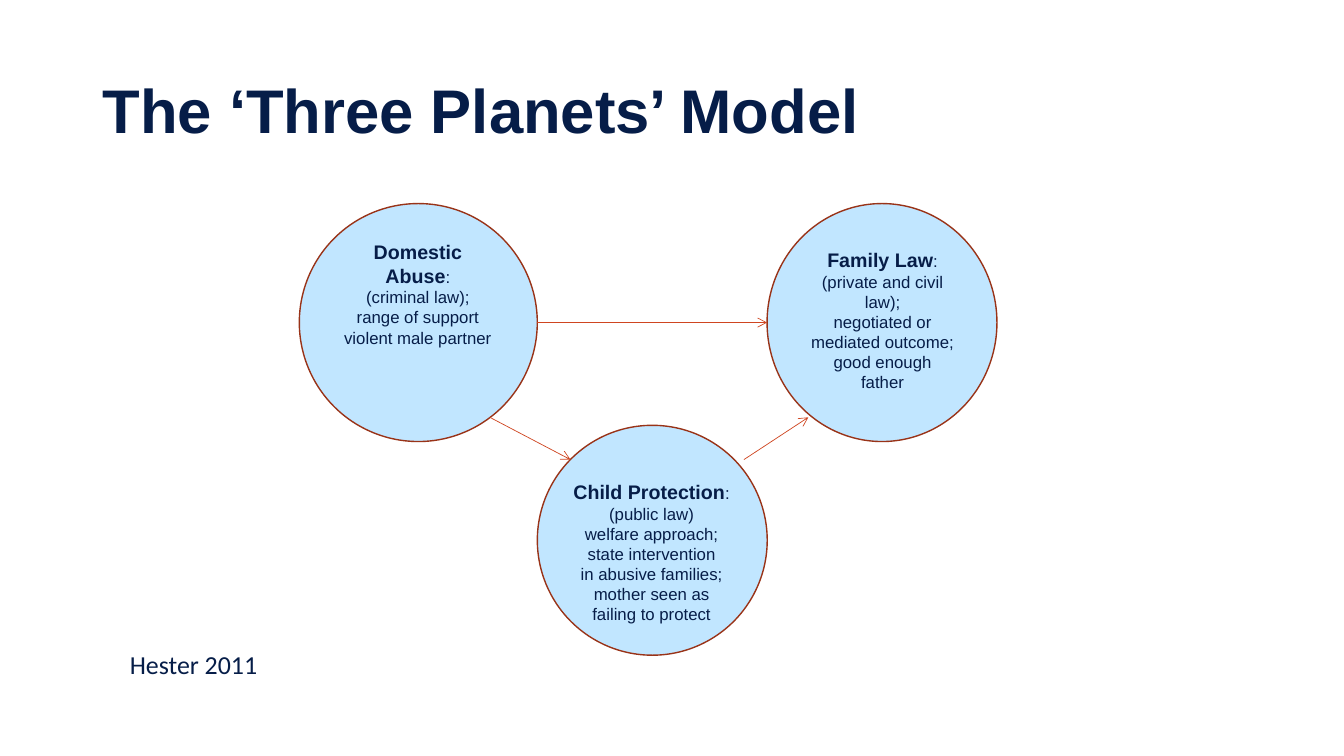
"""Build the 'Three Planets' model slide."""
from dataclasses import dataclass

from lxml.etree import SubElement
from pptx import Presentation
from pptx.dml.color import RGBColor
from pptx.enum.shapes import MSO_CONNECTOR as Connector, MSO_SHAPE as Shape
from pptx.enum.text import MSO_ANCHOR as Anchor, MSO_AUTO_SIZE as AutoSize, PP_ALIGN as Align
from pptx.oxml.ns import qn
from pptx.slide import Slide
from pptx.text.text import Font
from pptx.util import Pt


@dataclass(frozen=True)
class Theme:
    ink: RGBColor = RGBColor.from_string("061D48")
    planet_fill: RGBColor = RGBColor.from_string("C1E6FF")
    planet_line: RGBColor = RGBColor.from_string("993318")
    arrow: RGBColor = RGBColor.from_string("CF4520")
    font: str = "Arial"
    source_font: str = "Calibri"
    title_size: float = 44
    source_size: float = 18.5
    heading_size: float = 14
    body_size: float = 12


@dataclass(frozen=True)
class Box:
    left: float
    top: float
    width: float
    height: float

    def lengths(self) -> tuple[Pt, Pt, Pt, Pt]:
        return Pt(self.left), Pt(self.top), Pt(self.width), Pt(self.height)


@dataclass(frozen=True)
class Planet:
    disc: Box
    label: Box
    heading: str
    lines: tuple[str, ...]


@dataclass(frozen=True)
class Arrow:
    start: tuple[float, float]
    end: tuple[float, float]


THEME = Theme()
TITLE_BOX = Box(66.2, 28.8, 828, 104.4)
SOURCE_BOX = Box(85.7, 460, 200, 30)
PLANETS = (
    Planet(Box(213.8, 145.4, 170, 170), Box(236.2, 167.8, 124.6, 85), "Domestic Abuse",
           ("(criminal law);", "range of support", "violent male partner")),
    Planet(Box(547.9, 145.4, 164.2, 170), Box(571, 173.5, 118.8, 111.6), "Family Law",
           ("(private and civil law);", "negotiated or", "mediated outcome;",
            "good enough", "father")),
    Planet(Box(383.8, 303.8, 164.2, 164.2), Box(400.3, 339.1, 130.3, 111.6), "Child Protection",
           ("(public law)", "welfare approach;", "state intervention",
            "in abusive families;", "mother seen as", "failing to protect")),
)
ARROWS = (
    Arrow((383.8, 230.4), (547.9, 230.4)),
    Arrow((349.9, 298.1), (407.5, 328.3)),
    Arrow((531.4, 328.3), (577.4, 298.1)),
)


def style_font(font: Font, size: float, name: str = THEME.font) -> None:
    font.name = name
    font.size = Pt(size)
    font.color.rgb = THEME.ink


def add_title(slide: Slide, text: str) -> None:
    title = slide.shapes.title
    title.left, title.top, title.width, title.height = TITLE_BOX.lengths()
    frame = title.text_frame
    frame.text = text
    frame.auto_size = AutoSize.NONE
    frame.vertical_anchor = Anchor.MIDDLE
    paragraph = frame.paragraphs[0]
    paragraph.alignment = Align.LEFT
    paragraph.line_spacing = 0.9
    style_font(paragraph.font, THEME.title_size)
    paragraph.font.bold = True


def add_source(slide: Slide, text: str) -> None:
    frame = slide.shapes.add_textbox(*SOURCE_BOX.lengths()).text_frame
    frame.word_wrap = True
    frame.text = text
    style_font(frame.paragraphs[0].font, THEME.source_size, THEME.source_font)


def add_disc(slide: Slide, planet: Planet) -> None:
    disc = slide.shapes.add_shape(Shape.OVAL, *planet.disc.lengths())
    disc.shadow.inherit = False
    disc.fill.solid()
    disc.fill.fore_color.rgb = THEME.planet_fill
    disc.line.color.rgb = THEME.planet_line
    disc.line.width = Pt(1)


def add_label(slide: Slide, planet: Planet) -> None:
    frame = slide.shapes.add_textbox(*planet.label.lengths()).text_frame
    frame.word_wrap = True
    frame.text = "\n".join((":", *planet.lines))
    for paragraph in frame.paragraphs:
        paragraph.alignment = Align.CENTER
        style_font(paragraph.font, THEME.body_size)
    first = frame.paragraphs[0]
    first.clear()
    heading = first.add_run()
    heading.text = planet.heading
    heading.font.size = Pt(THEME.heading_size)
    heading.font.bold = True
    first.add_run().text = ":"


def add_arrow(slide: Slide, arrow: Arrow) -> None:
    ends = (Pt(value) for value in (*arrow.start, *arrow.end))
    connector = slide.shapes.add_connector(Connector.STRAIGHT, *ends)
    connector.line.color.rgb = THEME.arrow
    connector.line.width = Pt(0.5)
    SubElement(connector.line._get_or_add_ln(), qn("a:tailEnd"), type="arrow")
    SubElement(connector._element.spPr, qn("a:effectLst"))


def main() -> None:
    presentation = Presentation()
    presentation.slide_width = Pt(960)
    presentation.slide_height = Pt(540)
    slide = presentation.slides.add_slide(presentation.slide_layouts.get_by_name("Title Only"))
    add_title(slide, "The ‘Three Planets’ Model")
    add_source(slide, "Hester 2011")
    for planet in PLANETS:
        add_disc(slide, planet)
        add_label(slide, planet)
    for arrow in ARROWS:
        add_arrow(slide, arrow)
    presentation.save("out.pptx")


if __name__ == "__main__":
    main()
